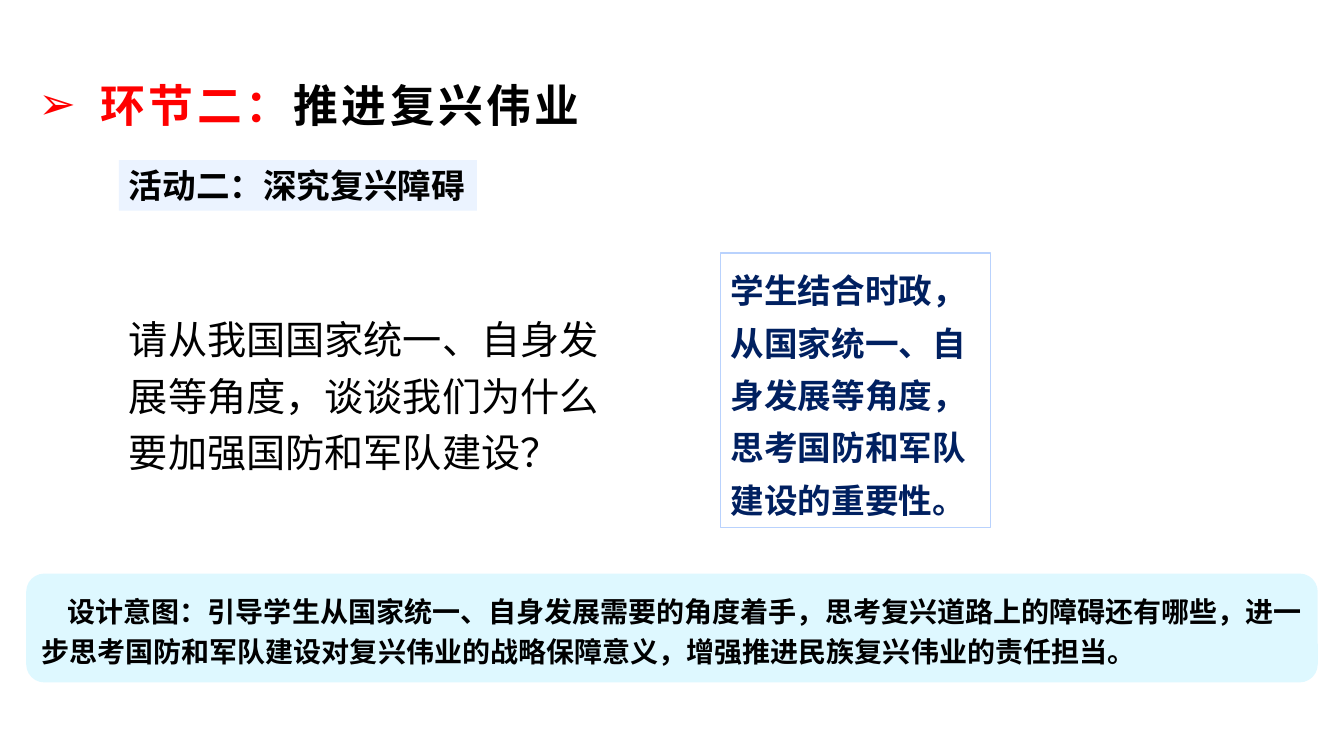
from lxml import etree
from pptx import Presentation
from pptx.dml.color import RGBColor
from pptx.enum.shapes import MSO_SHAPE as Shape
from pptx.enum.text import MSO_ANCHOR as Anchor, PP_ALIGN as Align
from pptx.oxml.ns import qn
from pptx.util import Inches, Pt

BLACK = RGBColor(0x00, 0x00, 0x00)
RED = RGBColor(0xFF, 0x00, 0x00)
NAVY = RGBColor(0x00, 0x20, 0x60)
PALE_CYAN = RGBColor(0xDE, 0xF8, 0xFF)
PALE_BLUE = RGBColor(0xEB, 0xF3, 0xFF)
BORDER_BLUE = RGBColor(0xB9, 0xD2, 0xFD)
CJK_FONT = "Noto Sans CJK SC"


def add_panel(slide, preset, left, top, width, height, fill=None, line=None):
    shape = slide.shapes.add_shape(
        preset, Inches(left), Inches(top), Inches(width), Inches(height))
    shape.shadow.inherit = False
    if fill is None:
        shape.fill.background()
    else:
        shape.fill.solid()
        shape.fill.fore_color.rgb = fill
    if line is None:
        shape.line.fill.background()
    else:
        shape.line.color.rgb = line
        shape.line.width = Pt(0.75)
    return shape


def add_text_box(slide, left, top, width, height):
    return slide.shapes.add_textbox(
        Inches(left), Inches(top), Inches(width), Inches(height))


def set_indent(paragraph, first_line, left=0, bullet=None):
    properties = paragraph._p.get_or_add_pPr()
    properties.set("marL", str(Inches(left)))
    properties.set("indent", str(Inches(first_line)))
    if bullet:
        etree.SubElement(properties, qn("a:buFont")).set("typeface", "Arial")
        etree.SubElement(properties, qn("a:buChar")).set("char", bullet)


def add_run(paragraph, text, size, color=BLACK, bold=True, font=CJK_FONT, spacing=0):
    """Spacing is the extra space between characters, in points."""
    run = paragraph.add_run()
    run.text = text
    run.font.size = Pt(size)
    run.font.bold = bold
    run.font.color.rgb = color
    run.font.name = font
    properties = run._r.get_or_add_rPr()
    etree.SubElement(properties, qn("a:ea")).set("typeface", CJK_FONT)
    if spacing:
        properties.set("spc", str(round(spacing * 100)))


def write_text(shape, *lines, anchor=Anchor.TOP, wrap=True, line_spacing=None, **format):
    """Each line is a list of (text, overrides) runs that share the format."""
    frame = shape.text_frame
    frame.word_wrap = wrap
    frame.vertical_anchor = anchor
    for index, runs in enumerate(lines):
        paragraph = frame.add_paragraph() if index else frame.paragraphs[0]
        paragraph.alignment = Align.LEFT
        if line_spacing:
            paragraph.line_spacing = line_spacing
        for text, overrides in runs:
            add_run(paragraph, text, **{**format, **overrides})
    return frame


def main():
    presentation = Presentation()
    presentation.slide_width = Inches(13.33)
    presentation.slide_height = Inches(7.5)
    slide = presentation.slides.add_slide(presentation.slide_layouts[6])

    title = add_text_box(slide, 0.31, 0.7, 12, 0.67)
    frame = write_text(title, [("环节二：", {"color": RED}), ("推进复兴伟业", {})],
                       anchor=Anchor.MIDDLE, size=32, spacing=2.4)
    frame.margin_left = frame.margin_right = Inches(0.07)
    frame.margin_top = frame.margin_bottom = Inches(0.03)
    set_indent(frame.paragraphs[0], -0.62, left=0.62, bullet="➢")

    intent = add_panel(slide, Shape.ROUNDED_RECTANGLE, 0.26, 5.69, 12.81, 1.08, PALE_CYAN)
    frame = write_text(
        intent,
        [("设计意图：引导学生从国家统一、自身发展需要的角度着手，思考复兴道路上的障碍还有哪些，"
          "进一步思考国防和军队建设对复兴伟业的战略保障意义，增强推进民族复兴伟业的责任担当。", {})],
        anchor=Anchor.MIDDLE, line_spacing=1.2, size=20)
    set_indent(frame.paragraphs[0], 0.26)

    activity = add_panel(slide, Shape.RECTANGLE, 1.18, 1.59, 3.55, 0.5, PALE_BLUE)
    write_text(activity, [("活动二", {"font": "Arial"}), ("：深究复兴障碍", {})],
               wrap=False, size=24)

    answer = add_panel(slide, Shape.RECTANGLE, 7.15, 2.51, 2.67, 2.72, line=BORDER_BLUE)
    write_text(answer,
               [("学生结合时政，从国家统一、自身发展等角度，", {})],
               [("思考国防和军队建设的重要性。", {})],
               line_spacing=1.3, size=24, color=NAVY)

    question = add_text_box(slide, 1.18, 2.99, 5.11, 1.8)
    write_text(question,
               [("请从我国国家统一、自身发展等角度，谈谈我们为什么要加强国防和军队建设？", {})],
               line_spacing=1.2, size=28, bold=False)

    presentation.save("out.pptx")


if __name__ == "__main__":
    main()
